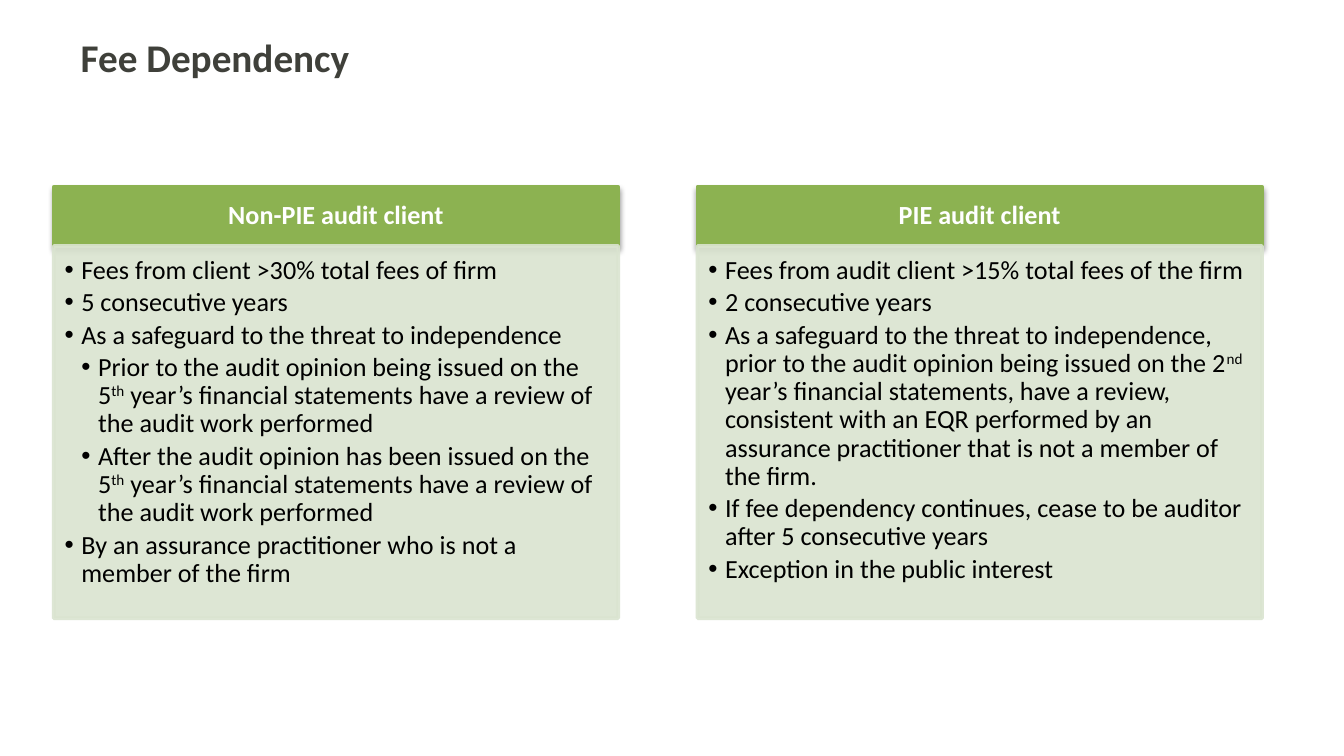
from lxml import etree
from pptx import Presentation
from pptx import util as u
from pptx.dml.color import RGBColor
from pptx.enum import text
from pptx.oxml.ns import qn

COLORS = {"title": "3F403A", "header": "8CB251", "panel": "DAE4D0",
          "white": "FFFFFF", "black": "000000"}

# A 16:9 slide and its column grid, in inches
SLIDE_WIDTH = 10
SLIDE_HEIGHT = SLIDE_WIDTH * 9 / 16
LEFT, COLUMN_STEP, COLUMN_WIDTH = 0.4, 4.79, 4.2
HEADER_TOP, HEADER_HEIGHT, PANEL_HEIGHT = 1.39, 0.44, 2.77
INDENT = 1 / 8

# Each column: header, then (level, text); carets enclose superscripts
CLIENTS = [
    ("Non-PIE audit client", [
        (0, "Fees from client >30% total fees of firm"),
        (0, "5 consecutive years"),
        (0, "As a safeguard to the threat to independence"),
        (1, "Prior to the audit opinion being issued on the 5^th^ year’s "
            "financial statements have a review of the audit work performed"),
        (1, "After the audit opinion has been issued on the 5^th^ year’s "
            "financial statements have a review of the audit work performed"),
        (0, "By an assurance practitioner who is not a member of the firm"),
    ]),
    ("PIE audit client", [
        (0, "Fees from audit client >15% total fees of the firm"),
        (0, "2 consecutive years"),
        (0, "As a safeguard to the threat to independence, prior to the audit "
            "opinion being issued on the 2^nd^ year’s financial statements, "
            "have a review, consistent with an EQR performed by an assurance "
            "practitioner that is not a member of the firm."),
        (0, "If fee dependency continues, cease to be auditor after "
            "5 consecutive years"),
        (0, "Exception in the public interest"),
    ]),
]


def rgb(name):
    return RGBColor.from_string(COLORS[name])


def set_all(target, values):
    for name, value in values.items():
        setattr(target, name, value)


def place(holder, box, insets, anchor):
    """Move a placeholder and set up its text frame."""
    set_all(holder, dict(zip(("left", "top", "width", "height"), map(u.Inches, box))))
    sides = ("margin_left", "margin_top", "margin_right", "margin_bottom")
    set_all(holder.text_frame, {
        **dict(zip(sides, map(u.Inches, insets))), "word_wrap": True,
        "auto_size": text.MSO_AUTO_SIZE.NONE, "vertical_anchor": anchor})


def paint(holder, color):
    holder.fill.solid()
    holder.fill.fore_color.rgb = rgb(color)
    holder.line.color.rgb = rgb(color)
    holder.line.width = u.Pt(2)


def add_alpha(color_element, percent):
    etree.SubElement(color_element, qn("a:alpha"), val=str(percent * 1000))


def add_shadow(holder):
    effects = etree.SubElement(holder._element.spPr, qn("a:effectLst"))
    shadow = etree.SubElement(effects, qn("a:outerShdw"), blurRad=str(u.Pt(3.1)),
                              dist=str(u.Pt(1.6)), dir="5400000", rotWithShape="0")
    add_alpha(etree.SubElement(shadow, qn("a:srgbClr"), val=COLORS["black"]), 38)


def write(paragraph, words, size, color, bold=False):
    """Add runs, raising every part between carets."""
    for index, part in enumerate(words.split("^")):
        run = paragraph.add_run()
        run.text = part
        set_all(run.font, {"name": "Calibri", "size": u.Pt(size), "bold": bold})
        run.font.color.rgb = rgb(color)
        if index % 2:
            run._r.get_or_add_rPr().set("baseline", "30000")


def add_bullet(paragraph, level):
    properties = paragraph._p.get_or_add_pPr()
    properties.set("marL", str(u.Inches(INDENT * (level + 1))))
    properties.set("indent", str(u.Inches(-INDENT)))
    etree.SubElement(properties, qn("a:buFont"), typeface="Arial")
    etree.SubElement(properties, qn("a:buChar"), char="•")


def fill_title(holder, words):
    place(holder, (0.5, 0.2, 9, 0.77), (0.1, 0.05, 0.1, 0.05), text.MSO_ANCHOR.TOP)
    heading = holder.text_frame.paragraphs[0]
    heading.alignment = text.PP_ALIGN.LEFT
    write(heading, words, 21, "title", bold=True)


def fill_header(holder, left, words):
    place(holder, (left, HEADER_TOP, COLUMN_WIDTH, HEADER_HEIGHT),
          (0.11, 0.06, 0.11, 0.06), text.MSO_ANCHOR.MIDDLE)
    paint(holder, "header")
    add_shadow(holder)
    client = holder.text_frame.paragraphs[0]
    set_all(client, {"alignment": text.PP_ALIGN.CENTER, "line_spacing": 0.9,
                     "space_before": u.Pt(0)})
    write(client, words, 14, "white", bold=True)


def fill_panel(holder, left, rules):
    place(holder, (left, HEADER_TOP + HEADER_HEIGHT, COLUMN_WIDTH, PANEL_HEIGHT),
          (0.08, 0.08, 0.11, 0.12), text.MSO_ANCHOR.TOP)
    paint(holder, "panel")
    for color in holder._element.spPr.iter(qn("a:srgbClr")):
        add_alpha(color, 90)
    frame = holder.text_frame
    for index, (level, words) in enumerate(rules):
        rule = frame.add_paragraph() if index else frame.paragraphs[0]
        add_bullet(rule, level)
        set_all(rule, {"level": level, "line_spacing": 0.9,
                       "space_before": u.Pt(0), "space_after": u.Pt(2.2)})
        write(rule, words, 14, "black")


def main():
    deck = Presentation()
    set_all(deck, {"slide_width": u.Inches(SLIDE_WIDTH),
                   "slide_height": u.Inches(SLIDE_HEIGHT)})

    # The comparison layout holds a title and two header-and-list pairs
    slide = deck.slides.add_slide(deck.slide_layouts.get_by_name("Comparison"))
    title, *columns = slide.placeholders
    fill_title(title, "Fee Dependency")

    # One column for each kind of client
    for index, (header, rules) in enumerate(CLIENTS):
        left = LEFT + index * COLUMN_STEP
        fill_header(columns[2 * index], left, header)
        fill_panel(columns[2 * index + 1], left, rules)

    deck.save("out.pptx")


if __name__ == "__main__":
    main()
